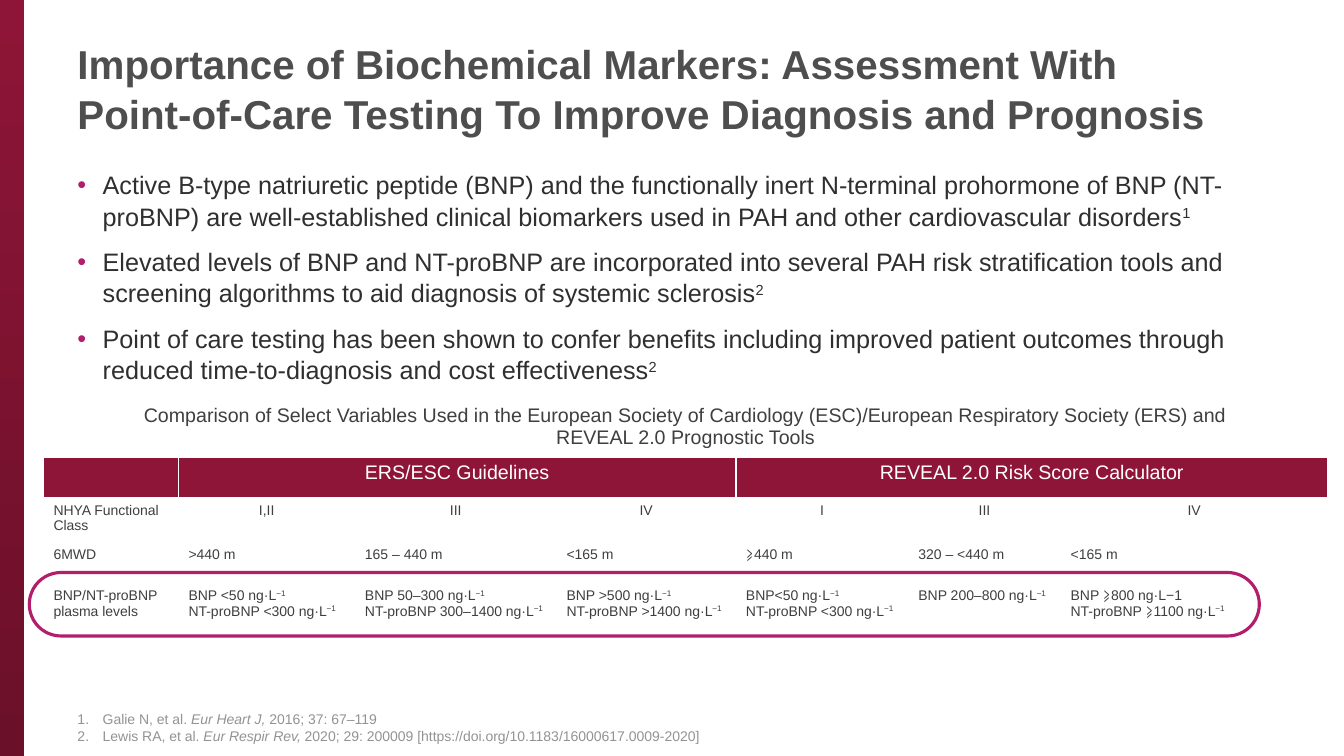
"""Build a slide on biochemical markers with a comparison table of prognostic tools."""
from lxml.etree import SubElement
from pptx import Presentation
from pptx.dml.color import RGBColor
from pptx.enum.shapes import MSO_SHAPE
from pptx.enum.text import MSO_ANCHOR, PP_ALIGN
from pptx.oxml.ns import qn
from pptx.util import Inches, Pt

WIDTH, HEIGHT = Inches(13.33), Inches(7.5)
FONT = "Arial"
WHITE = RGBColor(0xFF, 0xFF, 0xFF)
WINE = RGBColor(0x8E, 0x15, 0x37)
DARK_WINE = RGBColor(0x6B, 0x10, 0x29)
MAGENTA = RGBColor(0xB2, 0x1E, 0x6C)
TITLE_GREY = RGBColor(0x4D, 0x4E, 0x4D)
BODY_GREY = RGBColor(0x2F, 0x2F, 0x2F)
CELL_GREY = RGBColor(0x3F, 0x3F, 0x3F)
NOTE_GREY = RGBColor(0x93, 0x93, 0x93)

MARGIN, TEXT_WIDTH = 5.03, 88.15
ROW_HEIGHT = 5.47
COLUMNS = [10.05, 13.13, 15, 13.35, 12.83, 11.33, 19.88]

TITLE = ("Importance of Biochemical Markers: Assessment With "
         "Point-of-Care Testing To Improve Diagnosis and Prognosis")
BULLETS = [
    "Active B-type natriuretic peptide (BNP) and the functionally inert N-terminal "
    "prohormone of BNP (NT-proBNP) are well-established clinical biomarkers used in "
    "PAH and other cardiovascular disorders^1",
    "Elevated levels of BNP and NT-proBNP are incorporated into several PAH risk "
    "stratification tools and screening algorithms to aid diagnosis of systemic sclerosis^2",
    "Point of care testing has been shown to confer benefits including improved patient "
    "outcomes through reduced time-to-diagnosis and cost effectiveness^2",
]
CAPTION = ("Comparison of Select Variables Used in the European Society of Cardiology "
           "(ESC)/European Respiratory Society (ERS) and",
           "REVEAL 2.0 Prognostic Tools")
HEADERS = {1: "ERS/ESC Guidelines", 4: "REVEAL 2.0 Risk Score Calculator"}
ROWS = [
    ["NHYA Functional Class", "I,II", "III", "IV", "I", "III", "IV"],
    ["6MWD", ">440 m", "165 – 440 m", "<165 m", "⩾440 m", "320 – <440 m", "<165 m"],
    ["BNP/NT-proBNP\nplasma levels",
     "BNP <50 ng·L^−1\nNT-proBNP <300 ng·L^−1",
     "BNP 50–300 ng·L^−1\nNT-proBNP 300–1400 ng·L^−1",
     "BNP >500 ng·L^−1\nNT-proBNP >1400 ng·L^−1",
     "BNP<50 ng·L^−1\nNT-proBNP <300 ng·L^−1",
     "BNP 200–800 ng·L^−1",
     "BNP ⩾800 ng·L−1\nNT-proBNP ⩾1100 ng·L^−1"],
]
REFERENCES = [
    ("Galie N, et al. ", "Eur Heart J, ", "2016; 37: 67–119"),
    ("Lewis RA, et al. ", "Eur Respir Rev, ",
     "2020; 29: 200009 [https://doi.org/10.1183/16000617.0009-2020]"),
]


def across(share):
    """Turn a percentage of the slide width into a length."""
    return round(WIDTH * share / 100)


def down(share):
    """Turn a percentage of the slide height into a length."""
    return round(HEIGHT * share / 100)


def area(left, top, width, height):
    """Turn percentages of the slide into a position and size."""
    return across(left), down(top), across(width), down(height)


def add_run(p, text, size, color, bold=None, italic=None):
    """Add one formatted run to a paragraph."""
    r = p.add_run()
    r.text = text
    r.font.name, r.font.size = FONT, Pt(size)
    r.font.bold, r.font.italic = bold, italic
    r.font.color.rgb = color
    return r


def add_marked(p, text, size, color):
    """Add text whose part after a caret is superscript."""
    base, _, raised = text.partition("^")
    add_run(p, base, size, color)
    if raised:
        r = add_run(p, raised, size, color)
        r.font._element.set("baseline", "30000")


def paragraphs(tf, items):
    """Yield a paragraph of the text frame with each item."""
    for i, item in enumerate(items):
        yield (tf.add_paragraph() if i else tf.paragraphs[0]), item


def add_text_area(s, top, height, anchor):
    """Add a wrapping text box between the slide margins."""
    tf = s.shapes.add_textbox(*area(MARGIN, top, TEXT_WIDTH, height)).text_frame
    tf.word_wrap = True
    tf.vertical_anchor = anchor
    return tf


def hang(p, tag, **attributes):
    """Give a paragraph a hanging indent and a list marker."""
    pPr = p._p.get_or_add_pPr()
    pPr.set("marL", str(Inches(0.25)))
    pPr.set("indent", str(-Inches(0.25)))
    if tag == "a:buChar":
        SubElement(SubElement(pPr, qn("a:buClr")), qn("a:srgbClr"), val=str(MAGENTA))
        SubElement(pPr, qn("a:buFont"), typeface=FONT)
    SubElement(pPr, qn(tag), **attributes)


def add_shape(s, kind, *shares):
    """Add a preset shape without a shadow."""
    sp = s.shapes.add_shape(kind, *area(*shares))
    sp.shadow.inherit = False
    return sp


def add_stripe(s):
    """Add the gradient stripe along the left edge."""
    sp = add_shape(s, MSO_SHAPE.RECTANGLE, 0, 0, 1.8, 100)
    sp.line.fill.background()
    sp.fill.gradient()
    sp.fill.gradient_angle = 270
    for stop, color, position in zip(sp.fill.gradient_stops, (WINE, DARK_WINE), (0, 1)):
        stop.color.rgb, stop.position = color, position


def add_highlight(s):
    """Add the rounded outline around the last table row."""
    sp = add_shape(s, MSO_SHAPE.ROUNDED_RECTANGLE, 2.18, 75.73, 91.52, 8.4)
    sp.adjustments[0] = 0.5
    sp.fill.background()
    sp.line.color.rgb, sp.line.width = MAGENTA, Pt(2.25)


def style_cell(cell, fill, sides, bottom=1):
    """Set the white borders and the fill of a cell."""
    tcPr = cell._tc.get_or_add_tcPr()
    for side in sides:
        ln = SubElement(tcPr, qn(f"a:ln{side}"), w=str(Pt(bottom if side == "B" else 1)))
        SubElement(SubElement(ln, qn("a:solidFill")), qn("a:srgbClr"), val=str(WHITE))
    if fill is None:
        cell.fill.background()
    else:
        cell.fill.solid()
        cell.fill.fore_color.rgb = fill


def add_comparison(s):
    """Add the table comparing both prognostic tools."""
    count = len(ROWS) + 2
    table = s.shapes.add_table(
        count, len(COLUMNS),
        *area(3.23, 52.8, sum(COLUMNS), ROW_HEIGHT * count)).table
    table.first_row = table.horz_banding = False
    for column, share in zip(table.columns, COLUMNS):
        column.width = across(share)
    for i in range(count):
        for j in range(len(COLUMNS)):
            sides = {0: "LTB", 1: "RTB"}.get(j, "LRTB") if i == 1 else "LRTB"
            style_cell(table.cell(i, j), WINE if i == 1 else None, sides, 1 if i else 3)

    table.cell(0, 0).merge(table.cell(0, len(COLUMNS) - 1))
    p = table.cell(0, 0).text_frame.paragraphs[0]
    p.alignment = PP_ALIGN.CENTER
    add_run(p, CAPTION[0], 14, CELL_GREY)
    p.add_line_break()
    add_run(p, CAPTION[1], 14, CELL_GREY)
    for j, header in HEADERS.items():
        table.cell(1, j).merge(table.cell(1, j + 2))
        p = table.cell(1, j).text_frame.paragraphs[0]
        p.alignment = PP_ALIGN.CENTER
        add_run(p, header, 14, WHITE)
    for i, row in enumerate(ROWS):
        for j, value in enumerate(row):
            for p, text in paragraphs(table.cell(i + 2, j).text_frame, value.split("\n")):
                p.alignment = PP_ALIGN.CENTER if i == 0 and j else PP_ALIGN.LEFT
                add_marked(p, text, 10, CELL_GREY)


def main():
    """Build and save the slide."""
    prs = Presentation()
    prs.slide_width, prs.slide_height = WIDTH, HEIGHT
    s = prs.slides.add_slide(prs.slide_layouts[6])
    add_stripe(s)
    p = add_text_area(s, 2.93, 17.33, MSO_ANCHOR.MIDDLE).paragraphs[0]
    p.line_spacing = 1.04
    add_run(p, TITLE, 28.8, TITLE_GREY, bold=True)
    for p, text in paragraphs(add_text_area(s, 21.6, 68.8, MSO_ANCHOR.TOP), BULLETS):
        p.line_spacing, p.space_before = 1.04, Pt(10)
        hang(p, "a:buChar", char="•")
        add_marked(p, text, 18, BODY_GREY)
    add_comparison(s)
    add_highlight(s)
    for p, parts in paragraphs(add_text_area(s, 92.67, 6.4, MSO_ANCHOR.BOTTOM), REFERENCES):
        hang(p, "a:buAutoNum", type="arabicPeriod")
        for text, italic in zip(parts, (False, True, False)):
            add_run(p, text, 10, NOTE_GREY, italic=italic)
    prs.save("out.pptx")


if __name__ == "__main__":
    main()
